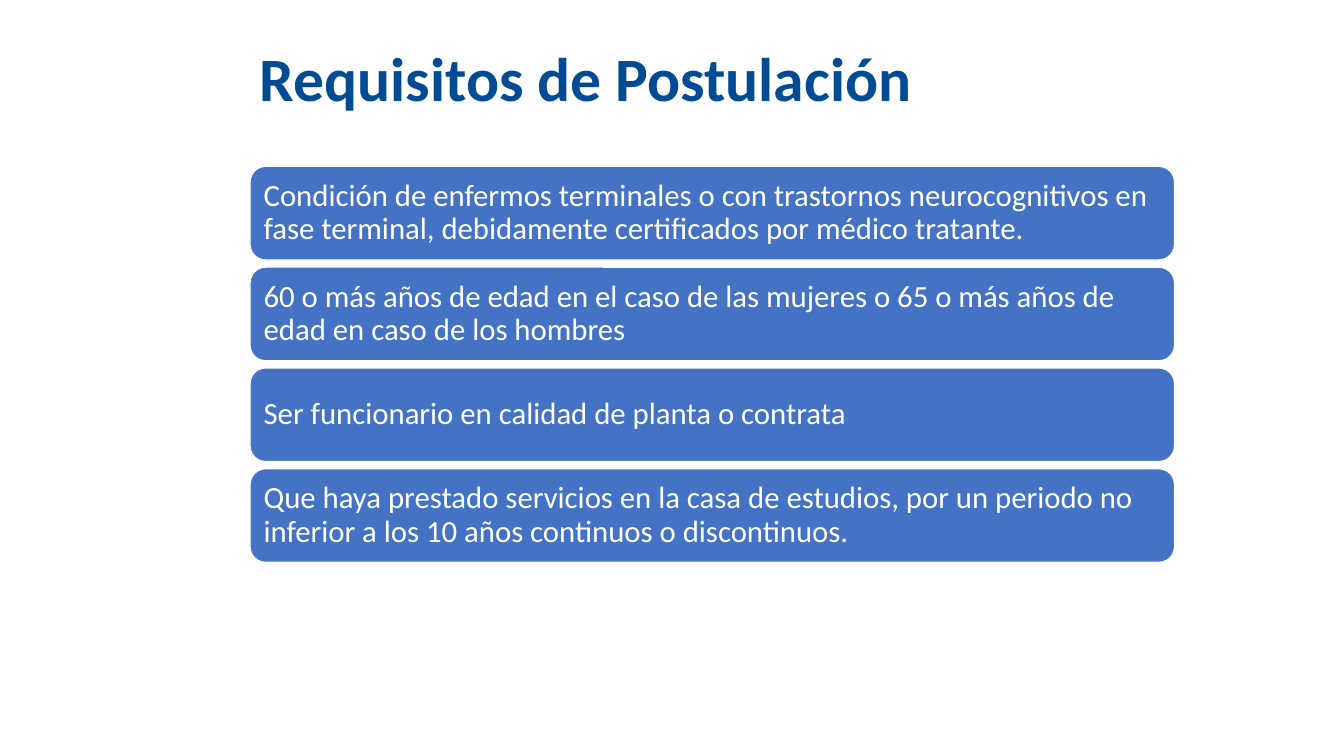
from pptx import Presentation
from pptx.dml.color import RGBColor
from pptx.enum.shapes import MSO_SHAPE
from pptx.enum.text import MSO_ANCHOR, PP_ALIGN
from pptx.util import Inches, Pt

ROUNDED = MSO_SHAPE.ROUNDED_RECTANGLE
MIDDLE = MSO_ANCHOR.MIDDLE
LEFT = PP_ALIGN.LEFT

COLORS = {"title": "004B93", "card": "4472C4", "white": "FFFFFF"}
FONT = "Calibri"

REQUIREMENTS = [
    "Condición de enfermos terminales o con trastornos neurocognitivos en "
    "fase terminal, debidamente certificados por médico tratante.",
    "60 o más años de edad en el caso de las mujeres o 65 o más años de "
    "edad en caso de los hombres",
    "Ser funcionario en calidad de planta o contrata",
    "Que haya prestado servicios en la casa de estudios, por un periodo no "
    "inferior a los 10 años continuos o discontinuos.",
]
CARD_LEFT, CARD_TOP = 2.48, 1.65
CARD_WIDTH, CARD_HEIGHT = 9.17, 0.93
CARD_PITCH = 1.0


class SlideBuilder:
    """Adds styled elements to one slide."""

    def __init__(self, prs):
        self.slide = prs.slides.add_slide(prs.slide_layouts[6])

    def color(self, name):
        return RGBColor.from_string(COLORS[name])

    def set_text(self, sp, text, size, color, bold=False, inset=(0.1, 0.05)):
        tf = sp.text_frame
        tf.word_wrap = True
        tf.vertical_anchor = MIDDLE
        tf.margin_left = tf.margin_right = Inches(inset[0])
        tf.margin_top = tf.margin_bottom = Inches(inset[1])
        p = tf.paragraphs[0]
        p.alignment = LEFT
        p.line_spacing = 0.9
        r = p.add_run()
        r.text = text
        r.font.name = FONT
        r.font.size = Pt(size)
        r.font.bold = bold
        r.font.color.rgb = self.color(color)

    def title(self, text, left, top, width, height):
        sp = self.slide.shapes.add_textbox(
            Inches(left), Inches(top), Inches(width), Inches(height))
        self.set_text(sp, text, 44, "title", bold=True)

    def card(self, text, left, top, width, height):
        sp = self.slide.shapes.add_shape(
            ROUNDED, Inches(left), Inches(top), Inches(width), Inches(height))
        sp.shadow.inherit = False
        sp.fill.solid()
        sp.fill.fore_color.rgb = self.color("card")
        sp.line.color.rgb = self.color("white")
        sp.line.width = Pt(1)
        self.set_text(sp, text, 22, "white", inset=(0.09, 0.09))


def main():
    prs = Presentation()
    prs.slide_width = Inches(13.33)
    prs.slide_height = Inches(7.5)
    s = SlideBuilder(prs)
    s.title("Requisitos de Postulación", CARD_LEFT, 0.44, 8.36, 0.74)
    for i, text in enumerate(REQUIREMENTS):
        s.card(text, CARD_LEFT, CARD_TOP + i * CARD_PITCH, CARD_WIDTH, CARD_HEIGHT)
    prs.save("out.pptx")


if __name__ == "__main__":
    main()
